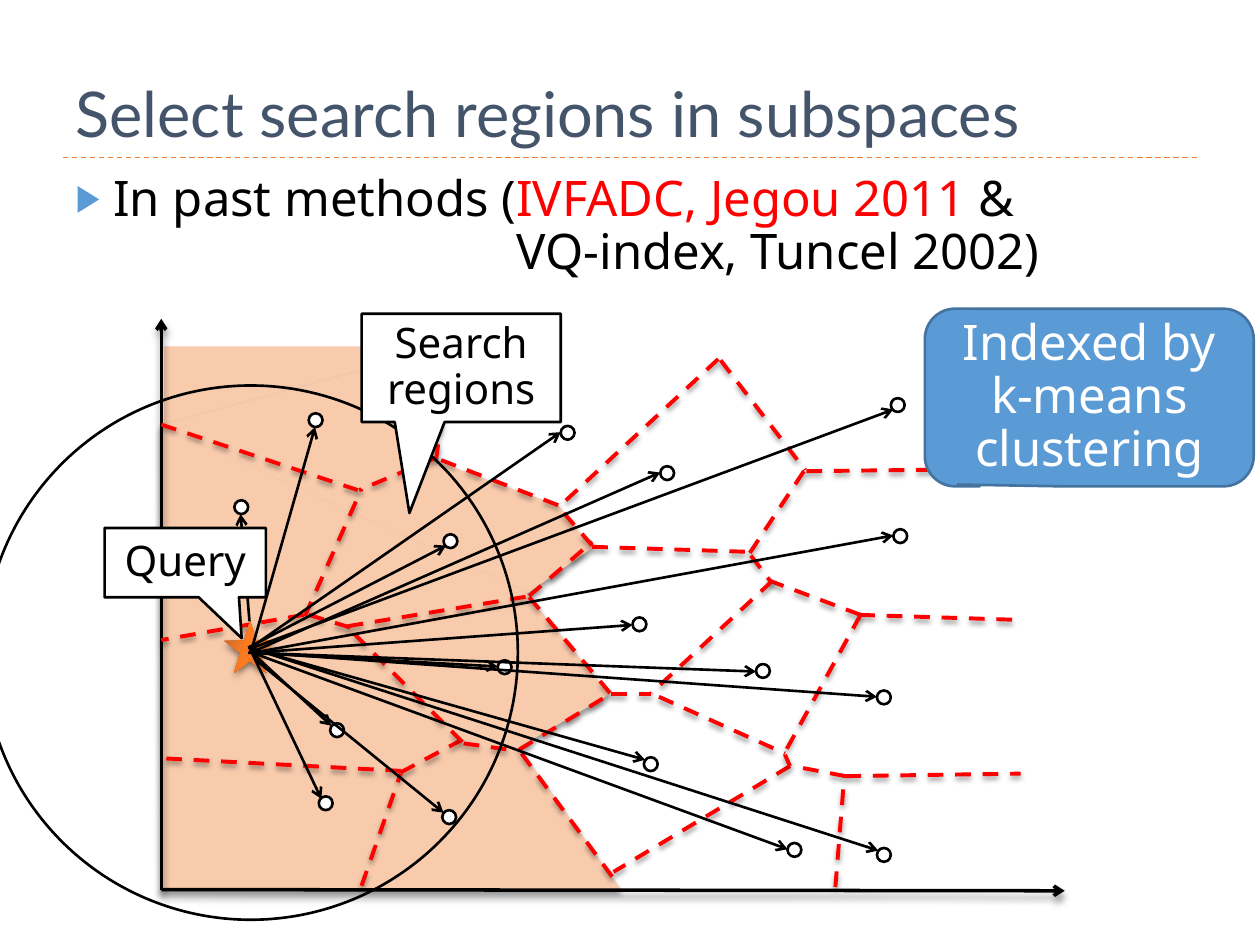
from lxml.etree import SubElement
from pptx import Presentation
from pptx.dml.color import RGBColor
from pptx.enum.dml import MSO_LINE
from pptx.enum.shapes import MSO_CONNECTOR, MSO_SHAPE
from pptx.enum.text import MSO_ANCHOR, MSO_AUTO_SIZE, PP_ALIGN
from pptx.oxml import parse_xml
from pptx.oxml.ns import nsdecls, qn
from pptx.util import Pt

PX = 9144  # 100 px to the inch

BLACK = RGBColor(0, 0, 0)
WHITE = RGBColor(255, 255, 255)
RED = RGBColor(255, 0, 0)
SLATE = RGBColor(0x44, 0x54, 0x6A)
ORANGE = RGBColor(0xED, 0x7D, 0x31)
PEACH = RGBColor(0xF8, 0xCB, 0xAD)
BLUE = RGBColor(0x5B, 0x9B, 0xD5)
NAVY = RGBColor(0x43, 0x73, 0x9E)
STAR = [(0, "C26628"), (30, "EB7626"), (45, "FE7A20"),
        (55, "FE7A20"), (73, "EB7626"), (100, "C26628")]

TITLE = "Select search regions in subspaces"
BODY = [
    [("In past methods (", BLACK), ("IVFADC, Jegou 2011 ", RED), ("&", BLACK)],
    [("VQ-index, Tuncel 2002)", BLACK)],
]

# Shaded search regions
CELLS = [
    [(127, 338), (357, 275), (346, 366), (443, 401), (470, 435), (417, 472)],
    [(128, 706), (127, 338), (416, 469), (484, 551), (412, 593), (493, 706)],
]
AXES = [(128, 706, 128, 253), (128, 706, 845, 707)]

# Cell borders: x1, y1, x2, y2
EDGES = [
    (128, 337, 284, 389), (242, 489, 287, 388), (241, 488, 128, 508),
    (245, 488, 278, 498), (276, 497, 421, 473), (420, 473, 470, 430),
    (470, 433, 443, 402), (443, 401, 347, 364), (347, 363, 285, 389),
    (357, 288, 346, 365), (570, 285, 445, 401), (572, 286, 639, 373),
    (640, 374, 811, 372), (638, 374, 595, 439), (470, 434, 595, 438),
    (682, 488, 808, 492), (683, 488, 611, 461), (671, 616, 810, 614),
    (663, 704, 670, 617), (671, 616, 629, 608), (627, 608, 487, 692),
    (414, 598, 486, 696), (368, 590, 411, 596), (318, 613, 365, 588),
    (132, 602, 321, 612), (287, 703, 318, 614), (367, 589, 275, 497),
    (596, 441, 612, 462), (613, 461, 517, 550), (420, 474, 485, 551),
    (485, 551, 517, 551), (412, 595, 484, 551), (523, 553, 623, 598),
    (683, 488, 623, 597), (627, 608, 623, 599),
]

# Centroids: left, top
DOTS = [
    (524, 370), (445, 338), (245, 328), (186, 397), (352, 424), (502, 490),
    (395, 524), (262, 574), (253, 632), (351, 643), (511, 601), (600, 527),
    (709, 420), (707, 316), (696, 548), (696, 673), (625, 669),
]
DOT = 11

# Distances from the query: x1, y1, x2, y2
RAYS = [
    (198, 493, 191, 408), (199, 518, 250, 339), (199, 514, 445, 343),
    (197, 514, 354, 433), (199, 518, 524, 375), (201, 514, 709, 325),
    (201, 518, 709, 425), (201, 518, 502, 496), (198, 518, 600, 533),
    (197, 514, 512, 603), (198, 514, 697, 675), (200, 518, 625, 674),
    (202, 523, 352, 645), (200, 518, 263, 576), (198, 514, 255, 634),
    (197, 518, 395, 529), (206, 518, 696, 553),
]

SOFT = (40, 3, 2)  # shadow: alpha %, blur pt, distance pt
WIDE = (40, 4, 3.4)

deck = Presentation()
deck.slide_width, deck.slide_height = 1000 * PX, 750 * PX
slide = deck.slides.add_slide(deck.slide_layouts[1])
shapes = slide.shapes


def shade(props, alpha, blur, dist):
    """Put a downward shadow in the effect list of a shape or connector."""
    glow = SubElement(props.find(qn("a:effectLst")), qn("a:outerShdw"),
                      blurRad=str(Pt(blur)), dist=str(Pt(dist)),
                      dir="5400000", rotWithShape="0")
    tint = SubElement(glow, qn("a:srgbClr"), val="000000")
    SubElement(tint, qn("a:alpha"), val=str(alpha * 1000))


def link(ends, color, width, dash=False, arrow=False, shadow=None):
    wire = shapes.add_connector(MSO_CONNECTOR.STRAIGHT, *[n * PX for n in ends])
    wire.line.color.rgb = color
    wire.line.width = Pt(width)
    if dash:
        wire.line.dash_style = MSO_LINE.DASH
    props = wire._element.spPr
    if arrow:
        SubElement(props.find(qn("a:ln")), qn("a:tailEnd"), type="arrow")
    SubElement(props, qn("a:effectLst"))
    if shadow:
        shade(props, *shadow)


def paint(shape, fill=None, line=None, shadow=None):
    shape.shadow.inherit = False
    if fill is None:
        shape.fill.background()
    else:
        shape.fill.solid()
        shape.fill.fore_color.rgb = fill
    if line is None:
        shape.line.fill.background()
    else:
        shape.line.color.rgb = line
        shape.line.width = Pt(1.5)
    if shadow:
        shade(shape._element.spPr, *shadow)


def form(kind, box, **look):
    shape = shapes.add_shape(kind, *[n * PX for n in box])
    paint(shape, **look)
    return shape


def write(para, runs, size, font, align):
    para.alignment = align
    para.line_spacing = 0.9
    for text, color in runs:
        run = para.add_run()
        run.text = text
        run.font.size = Pt(size)
        run.font.name = font
        run.font.color.rgb = color


def place(holder, box, anchor):
    holder.left, holder.top, holder.width, holder.height = [n * PX for n in box]
    frame = holder.text_frame
    frame.auto_size = MSO_AUTO_SIZE.NONE
    frame.vertical_anchor = anchor
    return frame


def callout(kind, box, tip, text, size, color, **look):
    shape = form(kind, box, **look)
    for i, part in enumerate(tip):
        shape.adjustments[i] = part
    frame = shape.text_frame
    frame.word_wrap = True
    frame.vertical_anchor = MSO_ANCHOR.MIDDLE
    write(frame.paragraphs[0], [(text, color)], size, "Noto Sans", PP_ALIGN.CENTER)


# Title and its rule
link((50, 125, 950, 125), ORANGE, 0.75, dash=True)
frame = place(shapes.title, (50, 17, 900, 108), MSO_ANCHOR.BOTTOM)
write(frame.paragraphs[0], [(TITLE, SLATE)], 36, "Lato", PP_ALIGN.LEFT)

# Body: a bullet line and its indented second line
frame = place(slide.placeholders[1], (50, 133, 900, 540), MSO_ANCHOR.TOP)
for i, runs in enumerate(BODY):
    para = frame.paragraphs[0] if i == 0 else frame.add_paragraph()
    write(para, runs, 28, "Noto Sans", PP_ALIGN.LEFT)
    para.space_before = Pt(0 if i else 6)
    props = para._p.get_or_add_pPr()
    props.set("marL", str((350 if i else 30) * PX))
    props.set("indent", str((0 if i else -30) * PX))
    if i:
        SubElement(props, qn("a:buNone"))
    else:
        tint = SubElement(props, qn("a:buClr"))
        SubElement(tint, qn("a:srgbClr"), val=str(BLUE))
        SubElement(props, qn("a:buSzPct"), val="76000")
        SubElement(props, qn("a:buChar"), char="▶")

# Shaded regions
form(MSO_SHAPE.RIGHT_TRIANGLE, (195, 210, 100, 230), fill=PEACH).rotation = 90
for first, *rest in CELLS:
    pen = shapes.build_freeform(*first, scale=PX)
    pen.add_line_segments(rest, close=True)
    paint(pen.convert_to_shape(), fill=PEACH, shadow=SOFT)

# Axes, borders and centroids
for ends in AXES:
    link(ends, BLACK, 2, arrow=True, shadow=WIDE)
for ends in EDGES:
    link(ends, RED, 2.25, dash=True, shadow=SOFT)
for spot in DOTS:
    form(MSO_SHAPE.OVAL, (*spot, DOT, DOT), fill=WHITE, line=BLACK)

# Query star and search circle
star = form(MSO_SHAPE.STAR_5_POINT, (178, 493, 41, 41), shadow=(50, 4, 2))
stops = "".join(f'<a:gs pos="{pos * 1000}"><a:srgbClr val="{tone}"/></a:gs>'
                for pos, tone in STAR)
blend = parse_xml(f'<a:gradFill {nsdecls("a")}><a:gsLst>{stops}</a:gsLst>'
                  '<a:lin ang="960000" scaled="0"/></a:gradFill>')
props = star._element.spPr
props.replace(props.find(qn("a:noFill")), blend)
form(MSO_SHAPE.OVAL, (-13, 306, 424, 424), line=BLACK)

# Callouts, with the distance arrows between them
callout(MSO_SHAPE.RECTANGULAR_CALLOUT, (287, 249, 158, 86), (-0.26, 1.34),
        "Search regions", 24, BLACK, fill=WHITE, line=BLACK)
for ends in RAYS:
    link(ends, BLACK, 1.5, arrow=True)
callout(MSO_SHAPE.RECTANGULAR_CALLOUT, (83, 419, 128, 55), (0.35, 1.09),
        "Query", 24, BLACK, fill=WHITE, line=BLACK)
callout(MSO_SHAPE.ROUNDED_RECTANGULAR_CALLOUT, (734, 245, 261, 141),
        (-0.4, 0.49, 0.17), "Indexed by k-means clustering", 28, WHITE,
        fill=BLUE, line=NAVY)

deck.save("out.pptx")
